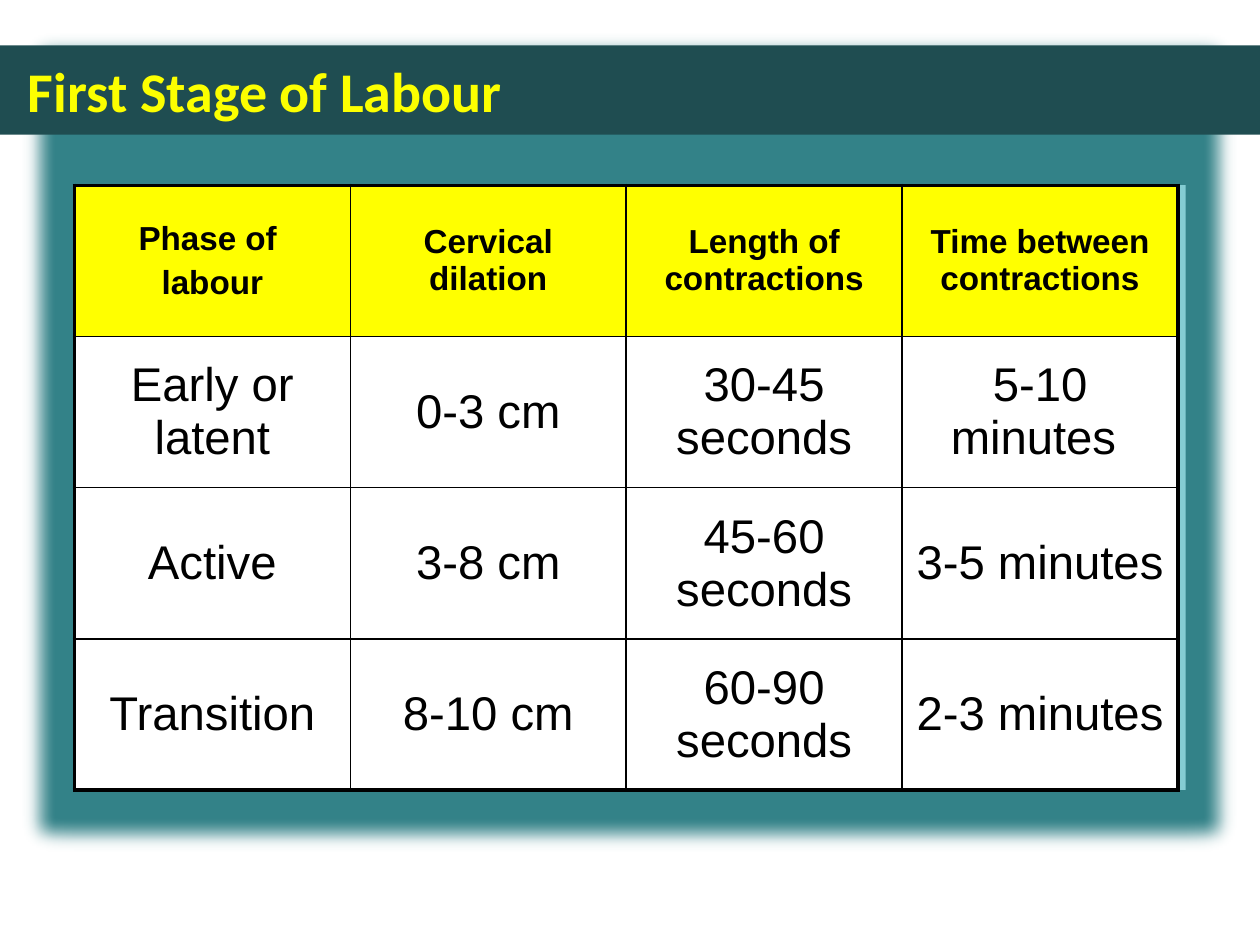
from lxml.etree import SubElement
from pptx import Presentation
from pptx.dml.color import RGBColor
from pptx.enum.shapes import MSO_SHAPE
from pptx.enum.text import MSO_ANCHOR, MSO_AUTO_SIZE, PP_ALIGN
from pptx.oxml.ns import qn
from pptx.util import Inches, Pt

COLORS = {
    "panel": "338288",
    "backing": "84CCD2",
    "bar": "1F4D51",
    "title": "FCFF00",
    "header": "FFFF00",
    "body": "FFFFFF",
    "ink": "000000",
}

# One list per row; a line break inside a cell starts a new paragraph
ROWS = [
    ["Phase of \nlabour", "Cervical dilation", "Length of contractions",
     "Time between contractions"],
    ["Early or latent", "0-3 cm", "30-45 seconds", "5-10 minutes "],
    ["Active", "3-8 cm", "45-60 seconds", "3-5 minutes "],
    ["Transition", "8-10 cm", "60-90 seconds", "2-3 minutes "],
]
COL_W, ROW_H = 2.19, 1.2
OUTER, INNER = 2.25, 1


def rgb(name):
    return RGBColor.from_string(COLORS[name])


def write(tf, text, size=27, font="Arial", color="ink", bold=False,
          align=PP_ALIGN.CENTER):
    for i, line in enumerate(text.split("\n")):
        p = tf.paragraphs[0] if i == 0 else tf.add_paragraph()
        p.alignment = align
        p.space_before = Pt(0.2 * size if i else 0)
        r = p.add_run()
        r.text = line
        r.font.size, r.font.name, r.font.bold = Pt(size), font, bold
        r.font.color.rgb = rgb(color)


def add_rect(s, x, y, w, h, color):
    sp = s.shapes.add_shape(MSO_SHAPE.RECTANGLE, *map(Inches, (x, y, w, h)))
    sp.shadow.inherit = False
    sp.fill.solid()
    sp.fill.fore_color.rgb = rgb(color)
    sp.line.fill.background()
    return sp


def soften(sp, radius):
    effects = sp._element.spPr.find(qn("a:effectLst"))
    SubElement(effects, qn("a:softEdge"), rad=str(Pt(radius)))


def place_title(s, text):
    title = s.shapes.title
    title.left, title.top = Inches(0.12), Inches(0.36)
    title.width, title.height = Inches(9.76), Inches(0.79)
    tf = title.text_frame
    tf.auto_size = MSO_AUTO_SIZE.NONE
    tf.vertical_anchor = MSO_ANCHOR.MIDDLE
    tf.margin_bottom = Inches(0.13)
    write(tf, text, size=32, font="Calibri", color="title", bold=True,
          align=PP_ALIGN.LEFT)
    # Bring the title in front of the bar
    s.shapes._spTree.append(title._element)


def set_borders(cell, widths):
    tc_pr = cell._tc.get_or_add_tcPr()
    for i, (side, width) in enumerate(widths.items()):
        ln = tc_pr.makeelement(qn(f"a:ln{side}"), {"w": str(Pt(width))})
        fill = SubElement(ln, qn("a:solidFill"))
        SubElement(fill, qn("a:srgbClr"), val=COLORS["ink"])
        tc_pr.insert(i, ln)


def add_phase_table(s, x, y):
    n_rows, n_cols = len(ROWS), len(ROWS[0])
    table = s.shapes.add_table(
        n_rows, n_cols, Inches(x), Inches(y),
        Inches(n_cols * COL_W), Inches(n_rows * ROW_H)).table
    table.first_row = table.horz_banding = False
    for col in table.columns:
        col.width = Inches(COL_W)
    for i, row in enumerate(ROWS):
        table.rows[i].height = Inches(ROW_H)
        header = i == 0
        for j, text in enumerate(row):
            cell = table.cell(i, j)
            cell.vertical_anchor = MSO_ANCHOR.MIDDLE
            cell.fill.solid()
            cell.fill.fore_color.rgb = rgb("header" if header else "body")
            write(cell.text_frame, text, size=19 if header else 27,
                  bold=header)
            set_borders(cell, {
                "L": OUTER if j == 0 else INNER,
                "R": OUTER if j == n_cols - 1 else INNER,
                "T": OUTER if header else INNER,
                "B": OUTER if i == n_rows - 1 else INNER,
            })


def main():
    prs = Presentation()
    prs.slide_width, prs.slide_height = Inches(10), Inches(7.5)
    s = prs.slides.add_slide(prs.slide_layouts[5])

    # Soft-edged panel, table backing and title bar
    soften(add_rect(s, 0.12, 0.21, 9.76, 6.61, "panel"), 12.5)
    add_rect(s, 0.64, 1.47, 8.77, 4.8, "backing")
    add_rect(s, 0, 0.36, 10, 0.71, "bar")

    place_title(s, "First Stage of Labour")
    add_phase_table(s, 0.59, 1.47)
    prs.save("out.pptx")


if __name__ == "__main__":
    main()
